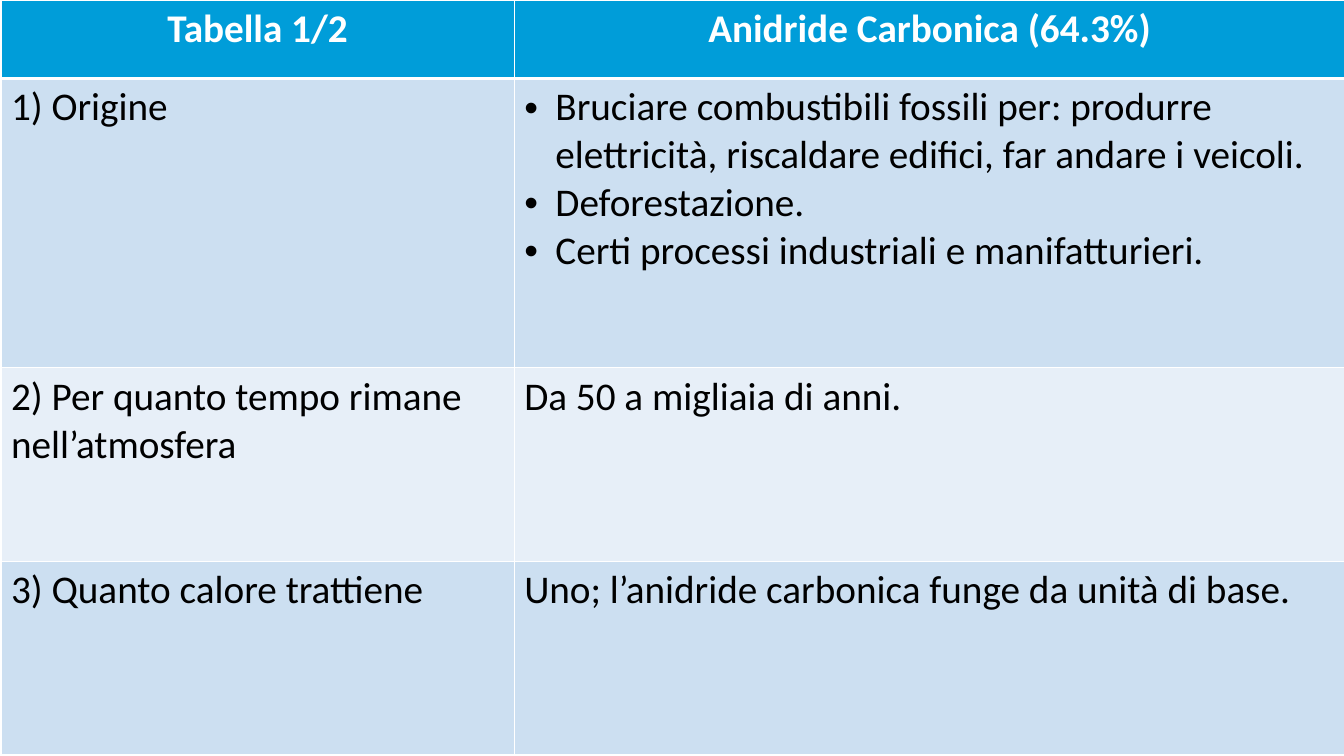
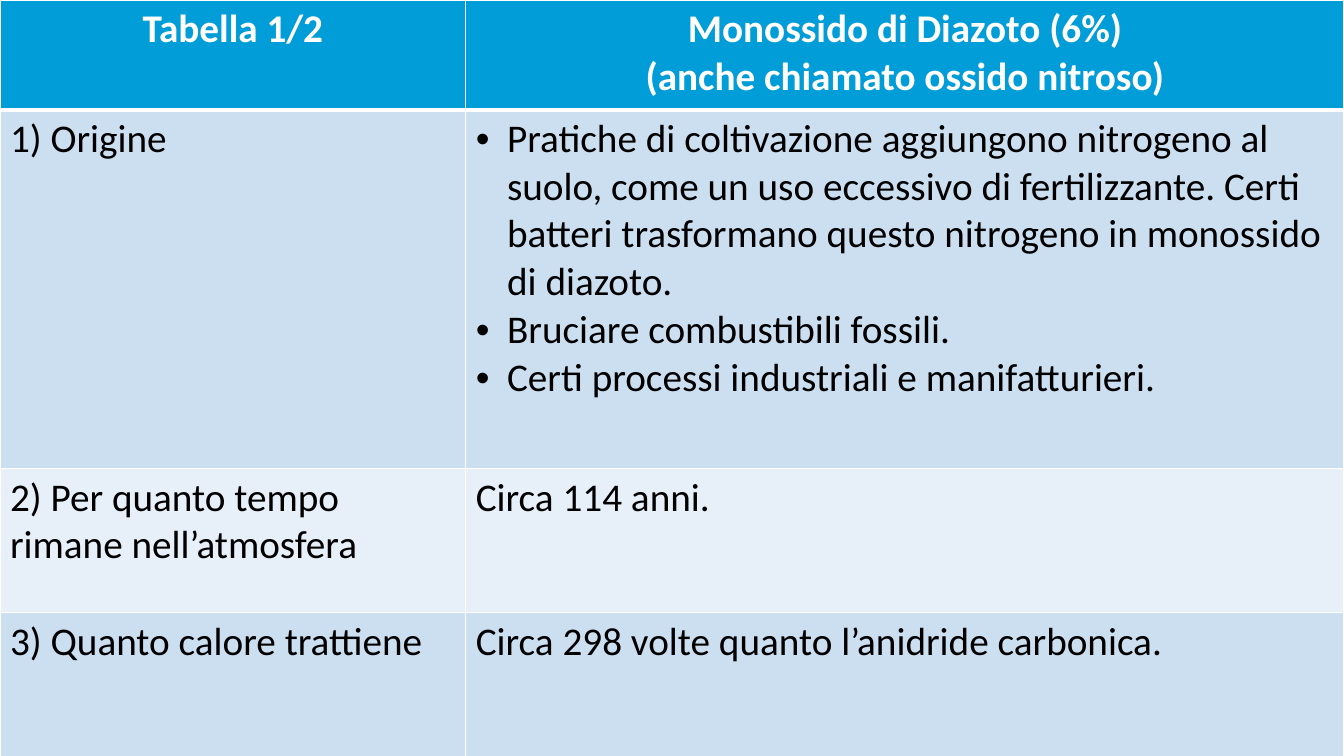
from lxml.etree import SubElement
from pptx import Presentation
from pptx.dml.color import RGBColor
from pptx.enum.text import PP_ALIGN
from pptx.oxml.ns import qn
from pptx.util import Inches, Pt

WIDTH, HEIGHT = 13.33, 7.5
HEAD, DARK, LIGHT = "009DD9", "CCDFF1", "E7EFF8"
WHITE, BLACK = "FFFFFF", "000000"
FONT, SIZE = "Calibri", 28
INDENT = 0.31
TOPICS = ["1) Origine", "2) Per quanto tempo rimane nell’atmosfera",
          "3) Quanto calore trattiene"]


def color(code):
    return RGBColor.from_string(code)


class Deck:
    def __init__(self):
        self.prs = Presentation()
        self.prs.slide_width = Inches(WIDTH)
        self.prs.slide_height = Inches(HEIGHT)

    def add(self):
        self.slide = self.prs.slides.add_slide(self.prs.slide_layouts[6])

    def borders(self, cell, top, bottom):
        """Draw white cell edges; top and bottom are widths in points."""
        props = cell._tc.get_or_add_tcPr()
        for side, width in (("L", 1), ("R", 1), ("T", top), ("B", bottom)):
            line = SubElement(props, qn(f"a:ln{side}"), w=str(Pt(width)))
            fill = SubElement(line, qn("a:solidFill"))
            SubElement(fill, qn("a:srgbClr"), val=WHITE)

    def bullet(self, para):
        props = para._p.get_or_add_pPr()
        props.set("marL", str(Inches(INDENT)))
        props.set("indent", str(-Inches(INDENT)))
        SubElement(props, qn("a:buFont"), typeface="Arial")
        SubElement(props, qn("a:buChar"), char="•")

    def cell(self, cell, text, row):
        """Fill one cell; a list of texts becomes bullets."""
        head = row == 0
        listed = isinstance(text, list)
        self.borders(cell, 3 if row == 1 else 1, 3 if head else 1)
        cell.fill.solid()
        shade = HEAD if head else DARK if row % 2 else LIGHT
        cell.fill.fore_color.rgb = color(shade)
        cell.text_frame.text = "\n".join(text) if listed else text
        for para in cell.text_frame.paragraphs:
            if head:
                para.alignment = PP_ALIGN.CENTER
            if listed:
                self.bullet(para)
            for run in para.runs:
                font = run.font
                font.name, font.size, font.bold = FONT, Pt(SIZE), head
                font.color.rgb = color(WHITE if head else BLACK)

    def table(self, left, split, heights, rows):
        """Fill the slide with two columns that meet at split."""
        frame = self.slide.shapes.add_table(
            len(rows), 2, Inches(left), 0, Inches(WIDTH), Inches(HEIGHT))
        table = frame.table
        for col, width in zip(table.columns, (split, WIDTH - split)):
            col.width = Inches(width)
        for i, (height, texts) in enumerate(zip(heights, rows)):
            table.rows[i].height = Inches(height)
            for j, text in enumerate(texts):
                self.cell(table.cell(i, j), text, i)

    def gas(self, left, split, heights, name, facts):
        """Add a slide on one gas, with a fact for each topic."""
        self.add()
        rows = [("Tabella 1/2", name), *zip(TOPICS, facts)]
        self.table(left, split, heights, rows)


def main():
    deck = Deck()
    industry = "Certi processi industriali e manifatturieri."
    deck.gas(0.01, 5.09, (0.78, 2.87, 1.92, 1.92),
             "Anidride Carbonica (64.3%)", [
                 ["Bruciare combustibili fossili per: produrre elettricità, "
                  "riscaldare edifici, far andare i veicoli.",
                  "Deforestazione.", industry],
                 "Da 50 a migliaia di anni.",
                 "Uno; l’anidride carbonica funge da unità di base."])
    deck.gas(0, 4.62, (1.09, 3.56, 1.43, 1.43),
             "Monossido di Diazoto (6%)\n(anche chiamato ossido nitroso)", [
                 ["Pratiche di coltivazione aggiungono nitrogeno al suolo, "
                  "come un uso eccessivo di fertilizzante. Certi batteri "
                  "trasformano questo nitrogeno in monossido di diazoto.",
                  "Bruciare combustibili fossili.", industry],
                 "Circa 114 anni.",
                 "Circa 298 volte quanto l’anidride carbonica."])
    deck.prs.save("out.pptx")


if __name__ == "__main__":
    main()
